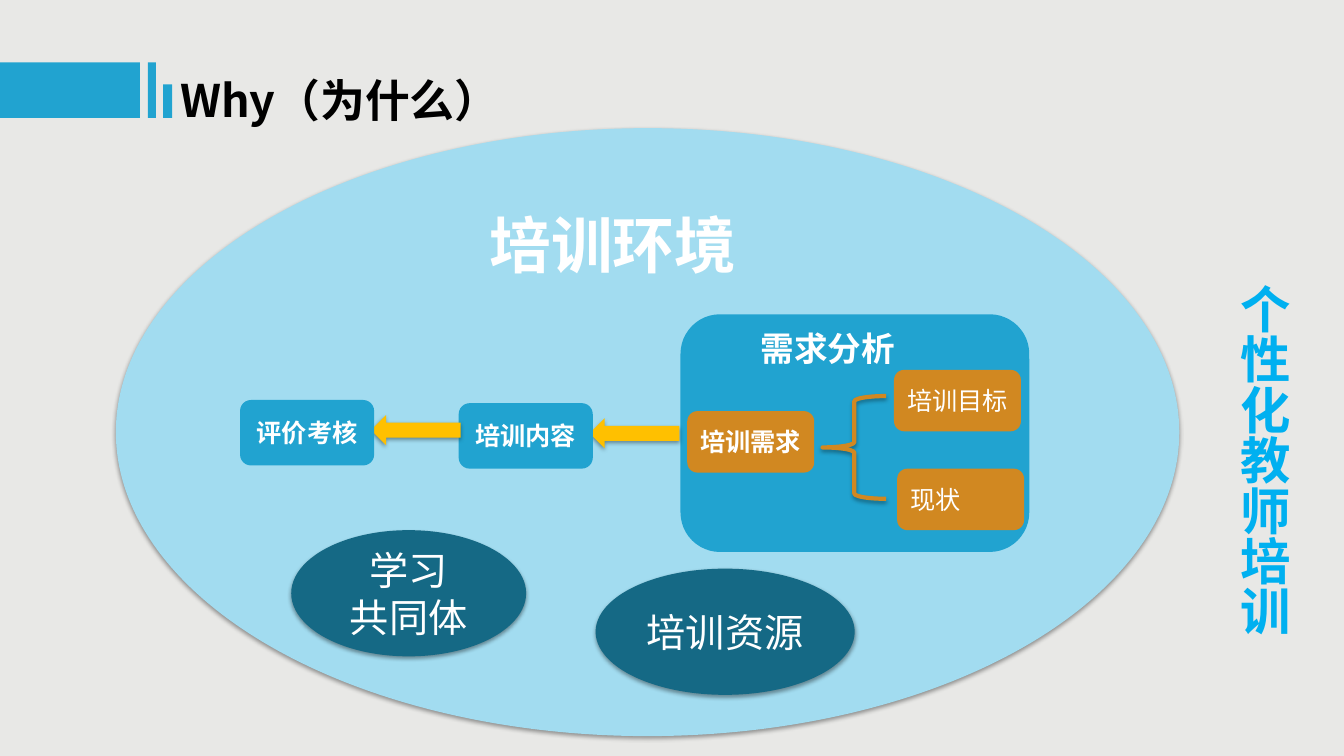
from lxml import etree
from pptx import Presentation
from pptx.dml.color import RGBColor
from pptx.enum.shapes import MSO_SHAPE
from pptx.enum.text import MSO_ANCHOR, MSO_AUTO_SIZE, PP_ALIGN
from pptx.oxml.ns import qn
from pptx.util import Cm, Pt

RECTANGLE = MSO_SHAPE.RECTANGLE
ROUNDED = MSO_SHAPE.ROUNDED_RECTANGLE
ELLIPSE = MSO_SHAPE.OVAL
LEFT_ARROW = MSO_SHAPE.LEFT_ARROW
LEFT_BRACE = MSO_SHAPE.LEFT_BRACE
LEFT, CENTER, JUSTIFY = PP_ALIGN.LEFT, PP_ALIGN.CENTER, PP_ALIGN.JUSTIFY
MIDDLE = MSO_ANCHOR.MIDDLE
FIT_SHAPE = MSO_AUTO_SIZE.SHAPE_TO_FIT_TEXT

FONT = "Noto Sans CJK SC"
BACKGROUND = "E8E8E6"
BLUE = "21A3D0"
PALE_BLUE = "A2DCF0"
DARK_BLUE = "156985"
SKY_BLUE = "00B0F0"
ORANGE = "D18821"
YELLOW = "FFC000"
WHITE = "FFFFFF"
BLACK = "000000"


def color(hex_string):
    return RGBColor.from_string(hex_string)


def add_shadow(shape, opacity=38, distance=1.6):
    """Add a soft shadow that falls straight down; distance is in points."""
    effects = shape._element.spPr.find(qn("a:effectLst"))
    shadow = etree.SubElement(
        effects, qn("a:outerShdw"), blurRad=str(Pt(3.1)), dist=str(Pt(distance)),
        dir="5400000", rotWithShape="0")
    shade = etree.SubElement(shadow, qn("a:srgbClr"), val=BLACK)
    etree.SubElement(shade, qn("a:alpha"), val=str(opacity * 1000))


def write_text(frame, lines, size, font_color, bold, alignment):
    for index, line in enumerate(lines):
        paragraph = frame.add_paragraph() if index else frame.paragraphs[0]
        paragraph.alignment = alignment
        run = paragraph.add_run()
        run.text = line
        font = run.font
        font.name, font.size, font.bold = FONT, Pt(size), bold
        font.color.rgb = color(font_color)
        etree.SubElement(run._r.get_or_add_rPr(), qn("a:ea"), typeface=FONT)


def add_filled(shapes, kind, box, fill, shadow=False):
    shape = shapes.add_shape(kind, *map(Cm, box))
    shape.fill.solid()
    shape.fill.fore_color.rgb = color(fill)
    shape.line.fill.background()
    shape.shadow.inherit = False
    if shadow:
        add_shadow(shape)
    return shape


def add_label(shapes, box, text, size, font_color=WHITE, alignment=LEFT,
              wrap=True, vertical=False):
    frame = shapes.add_textbox(*map(Cm, box)).text_frame
    frame.word_wrap = wrap
    frame.auto_size = FIT_SHAPE
    if vertical:
        frame._txBody.bodyPr.set("vert", "eaVert")
    write_text(frame, [text], size, font_color, True, alignment)


def add_node(shapes, kind, box, fill, lines, size=18, bold=False,
             alignment=CENTER, shadow=False):
    frame = add_filled(shapes, kind, box, fill, shadow).text_frame
    frame.word_wrap = True
    frame.vertical_anchor = MIDDLE
    write_text(frame, lines, size, WHITE, bold, alignment)


def add_step(shapes, left, top, text):
    add_node(shapes, ROUNDED, (left, top, 3.38, 1.65), BLUE, [text], bold=True)


def add_need(shapes, left, top, text, bold=False, alignment=CENTER):
    add_node(shapes, ROUNDED, (left, top, 3.2, 1.55), ORANGE, [text],
             bold=bold, alignment=alignment)


def add_arrow(shapes, left, top):
    add_filled(shapes, LEFT_ARROW, (left, top, 2.26, 0.76), YELLOW, shadow=True)


def add_brace(shapes, box):
    brace = shapes.add_shape(LEFT_BRACE, *map(Cm, box))
    brace.fill.background()
    brace.line.color.rgb = color(ORANGE)
    brace.line.width = Pt(3)
    brace.shadow.inherit = False
    add_shadow(brace, opacity=35, distance=1.8)


def add_header(shapes):
    for bar in [(0, 1.57, 3.53, 1.4), (3.73, 1.57, 0.2, 1.4), (4.11, 2.13, 0.23, 0.84)]:
        add_filled(shapes, RECTANGLE, bar, BLUE)
    add_label(shapes, (4.29, 1.7, 9.98, 1.63), "Why（为什么）", 32, BLACK)


def add_analysis_panel(shapes):
    panel = shapes.add_group_shape().shapes
    add_filled(panel, ROUNDED, (17.15, 7.92, 8.79, 5.99), BLUE)
    add_label(panel, (18.92, 8.13, 3.94, 1.27), "需求分析", 24, wrap=False)


def main():
    presentation = Presentation()
    presentation.slide_width = Cm(33.87)
    presentation.slide_height = Cm(19.05)
    slide = presentation.slides.add_slide(presentation.slide_layouts[6])
    slide.background.fill.solid()
    slide.background.fill.fore_color.rgb = color(BACKGROUND)
    shapes = slide.shapes

    add_header(shapes)
    add_filled(shapes, ELLIPSE, (2.92, 3.23, 26.8, 15.32), PALE_BLUE, shadow=True)
    add_analysis_panel(shapes)

    add_arrow(shapes, 14.86, 10.54)
    add_step(shapes, 11.56, 10.16, "培训内容")
    add_need(shapes, 22.61, 11.81, "现状", alignment=JUSTIFY)
    add_arrow(shapes, 9.35, 10.46)
    add_step(shapes, 6.05, 10.08, "评价考核")

    add_label(shapes, (12.09, 5.08, 7.82, 2.13), "培训环境", 44, alignment=JUSTIFY)
    add_node(shapes, ELLIPSE, (7.34, 13.36, 5.92, 3.18), DARK_BLUE,
             ["学习", "共同体"], size=28, shadow=True)
    add_node(shapes, ELLIPSE, (15.01, 14.33, 6.53, 3.18), DARK_BLUE,
             ["培训资源"], size=28, shadow=True)
    add_label(shapes, (30.68, 6.91, 2.06, 9.25), "个性化教师培训", 36, SKY_BLUE,
              wrap=False, vertical=True)

    add_brace(shapes, (20.73, 9.98, 1.6, 2.59))
    add_need(shapes, 22.53, 9.32, "培训目标")
    add_need(shapes, 17.32, 10.36, "培训需求", bold=True)

    presentation.save("out.pptx")


if __name__ == "__main__":
    main()
